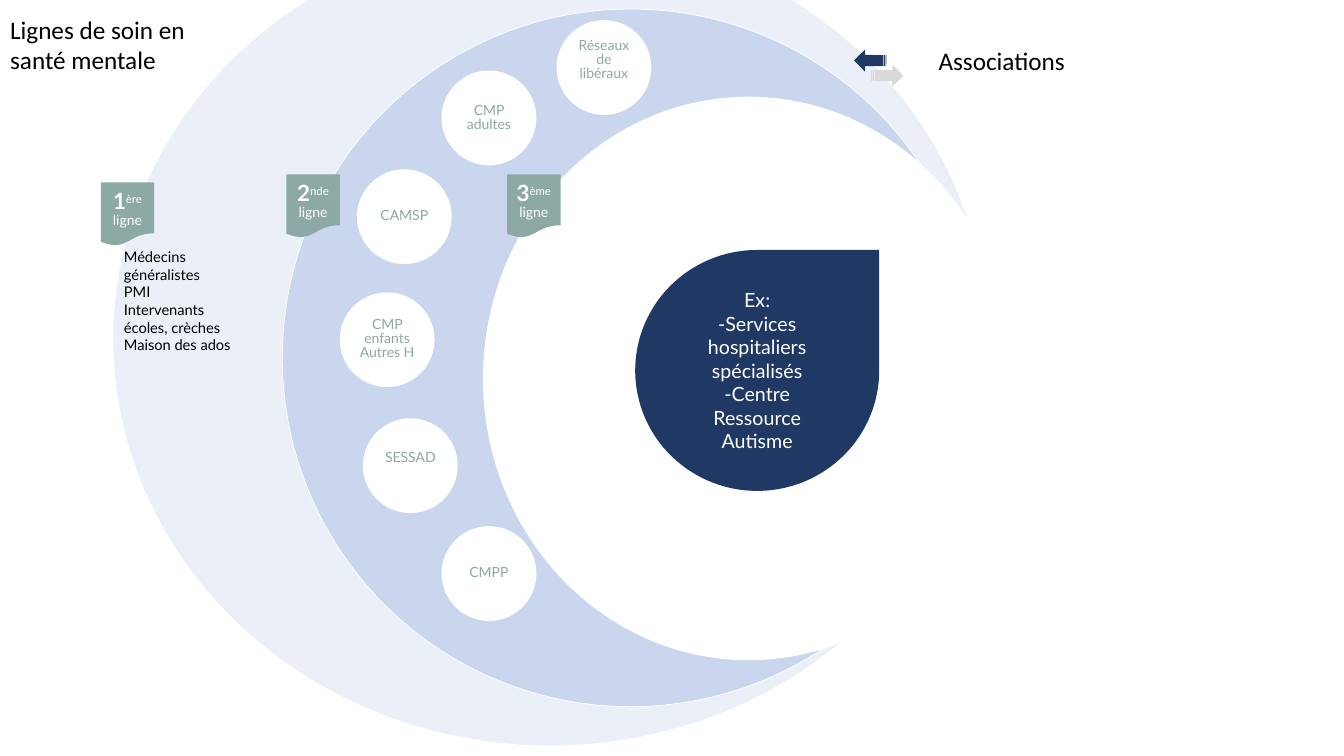
from dataclasses import dataclass

from lxml.etree import SubElement
from pptx import Presentation
from pptx.dml.color import RGBColor
from pptx.enum.shapes import MSO_SHAPE as Shape
from pptx.enum.text import MSO_ANCHOR as Anchor, PP_ALIGN as Align
from pptx.oxml.ns import qn
from pptx.util import Inches, Pt

BLUE = RGBColor(0x44, 0x72, 0xC4)
NAVY = RGBColor(0x20, 0x38, 0x64)
SAGE = RGBColor(0x8C, 0xA9, 0xA5)
GREY = RGBColor(0xD9, 0xD9, 0xD9)
WHITE = RGBColor(0xFF, 0xFF, 0xFF)
BLACK = RGBColor(0, 0, 0)
BUBBLE_SIZE = 0.94


@dataclass
class Disc:
    left: float
    top: float
    width: float
    height: float
    color: RGBColor
    opacity: int = 100


@dataclass
class Ribbon:
    left: float
    top: float
    number: str
    suffix: str


@dataclass
class Bubble:
    left: float
    top: float
    lines: tuple[str, ...]
    bottom: float = 0


@dataclass
class Arrow:
    left: float
    top: float
    rotation: float
    color: RGBColor


DISCS = [
    Disc(1.12, -0.68, 8.67, 8.08, BLUE, 10),
    Disc(2.8, 0.09, 6.91, 6.92, BLUE, 20),
    Disc(4.79, 0.96, 5.27, 5.59, WHITE),
]
RIBBONS = [
    Ribbon(1, 1.81, "1", "ère"),
    Ribbon(2.84, 1.73, "2", "nde"),
    Ribbon(5.03, 1.73, "3", "ème"),
]
BUBBLES = [
    Bubble(5.52, 0.2, ("Réseaux", "de libéraux"), 0.14),
    Bubble(4.38, 0.7, ("CMP adultes",)),
    Bubble(3.54, 1.68, ("CAMSP",)),
    Bubble(3.37, 2.9, ("CMP enfants Autres H",)),
    Bubble(3.6, 4.15, ("SESSAD",), 0.14),
    Bubble(4.38, 5.22, ("CMPP",)),
]
ARROWS = [Arrow(8.64, 0.64, 0.6, GREY), Arrow(8.47, 0.49, 180.6, NAVY)]
FIRST_LINE = ("Médecins", "généralistes", "PMI", "Intervenants",
              "écoles, crèches", "Maison des ados")
EXAMPLES = ("Ex:", "-Services hospitaliers spécialisés",
            "-Centre Ressource Autisme")


def add_shape(page, kind, left, top, width, height, color: RGBColor):
    shape = page.shapes.add_shape(
        kind, Inches(left), Inches(top), Inches(width), Inches(height))
    shape.shadow.inherit = False
    shape.fill.solid()
    shape.fill.fore_color.rgb = color
    shape.line.fill.background()
    return shape


def add_span(para, text: str, size: float, color: RGBColor,
             font: str = "Lato", bold: bool = False):
    span = para.add_run()
    span.text = text
    span.font.size = Pt(size)
    span.font.name = font
    span.font.bold = bold
    span.font.color.rgb = color
    return span


def set_frame(frame, insets=(0.1, 0.05, 0.1, 0.05), anchor=Anchor.MIDDLE) -> None:
    frame.word_wrap = True
    frame.vertical_anchor = anchor
    (frame.margin_left, frame.margin_top,
     frame.margin_right, frame.margin_bottom) = map(Inches, insets)


def write(frame, lines, *, size: float, color: RGBColor, font: str = "Lato",
          align=Align.LEFT, spacing=1.0) -> None:
    for index, line in enumerate(lines):
        para = frame.add_paragraph() if index else frame.paragraphs[0]
        para.alignment = align
        para.line_spacing = spacing
        add_span(para, line, size, color, font)


def add_disc(page, disc: Disc) -> None:
    shape = add_shape(page, Shape.OVAL, disc.left, disc.top,
                      disc.width, disc.height, disc.color)
    if disc.opacity < 100:
        color = shape.element.spPr.find(f"{qn('a:solidFill')}/{qn('a:srgbClr')}")
        SubElement(color, qn("a:alpha")).set("val", str(disc.opacity * 1000))
        shape.line.color.rgb = WHITE
        shape.line.width = Pt(0.5)


def add_ribbon(page, ribbon: Ribbon) -> None:
    shape = add_shape(page, Shape.FLOWCHART_DOCUMENT, ribbon.left, ribbon.top,
                      0.53, 0.63, SAGE)
    frame = shape.text_frame
    set_frame(frame, (0, 0.12, 0, 0))
    rank, label = frame.paragraphs[0], frame.add_paragraph()
    for para in (rank, label):
        para.alignment = Align.CENTER
        para.line_spacing = Pt(10)
    add_span(rank, ribbon.number, 16, WHITE, bold=True)
    suffix = add_span(rank, ribbon.suffix, 14, WHITE)
    suffix.font._element.set("baseline", "30000")
    add_span(label, "ligne", 10, WHITE)


def add_bubble(page, bubble: Bubble) -> None:
    shape = add_shape(page, Shape.OVAL, bubble.left, bubble.top,
                      BUBBLE_SIZE, BUBBLE_SIZE, WHITE)
    set_frame(shape.text_frame, (0, 0, 0, bubble.bottom))
    write(shape.text_frame, bubble.lines, size=10, color=SAGE,
          align=Align.CENTER, spacing=Pt(10))


def add_arrow(page, arrow: Arrow) -> None:
    shape = add_shape(page, Shape.STRIPED_RIGHT_ARROW, arrow.left, arrow.top,
                      0.32, 0.22, arrow.color)
    shape.rotation = arrow.rotation


def add_label(page, left, top, width, height):
    return page.shapes.add_textbox(
        Inches(left), Inches(top), Inches(width), Inches(height)).text_frame


def main() -> None:
    deck = Presentation()
    deck.slide_width, deck.slide_height = Inches(13.33), Inches(7.5)
    page = deck.slides.add_slide(deck.slide_layouts[5])

    title = page.shapes.title
    title.left, title.top = Inches(0), Inches(0.09)
    title.width, title.height = Inches(2.18), Inches(0.71)
    set_frame(title.text_frame, anchor=Anchor.TOP)
    write(title.text_frame, ["Lignes de soin en santé mentale"],
          size=18, color=BLACK, font="Calibri")

    for disc in DISCS:
        add_disc(page, disc)
    for ribbon in RIBBONS:
        add_ribbon(page, ribbon)
    for bubble in BUBBLES:
        add_bubble(page, bubble)
    for arrow in ARROWS:
        add_arrow(page, arrow)

    drop = add_shape(page, Shape.TEAR, 6.3, 2.48, 2.42, 2.39, NAVY)
    set_frame(drop.text_frame)
    write(drop.text_frame, EXAMPLES, size=14, color=WHITE, align=Align.CENTER)

    first_line = add_label(page, 1.23, 2.46, 1.46, 1.06)
    set_frame(first_line, (0, 0, 0, 0), Anchor.TOP)
    write(first_line, FIRST_LINE, size=10.5, color=BLACK)

    partners = add_label(page, 9.21, 0.4, 1.69, 0.4)
    set_frame(partners, anchor=Anchor.TOP)
    write(partners, ["Associations"], size=18, color=BLACK, font="Calibri")

    deck.save("out.pptx")


if __name__ == "__main__":
    main()
